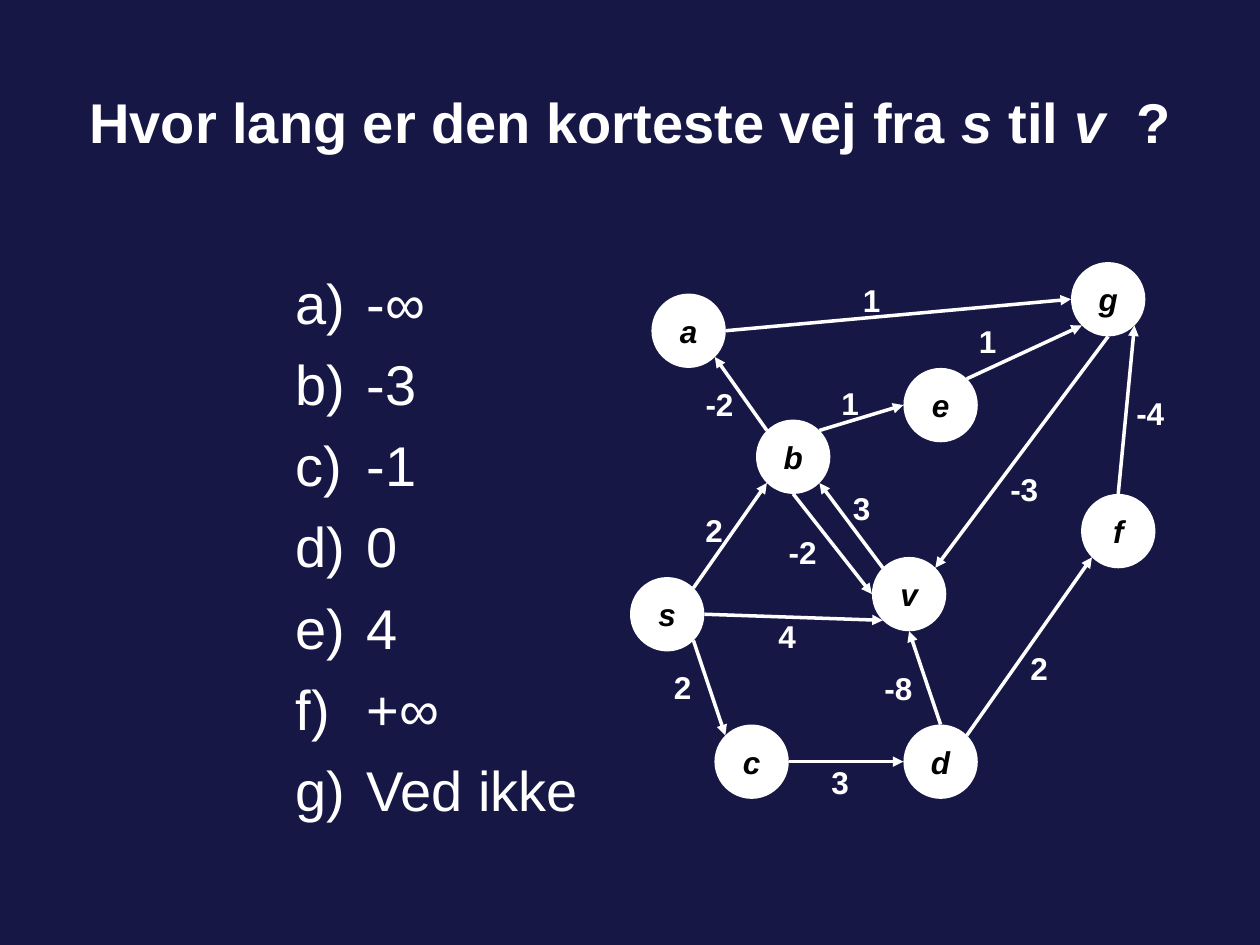
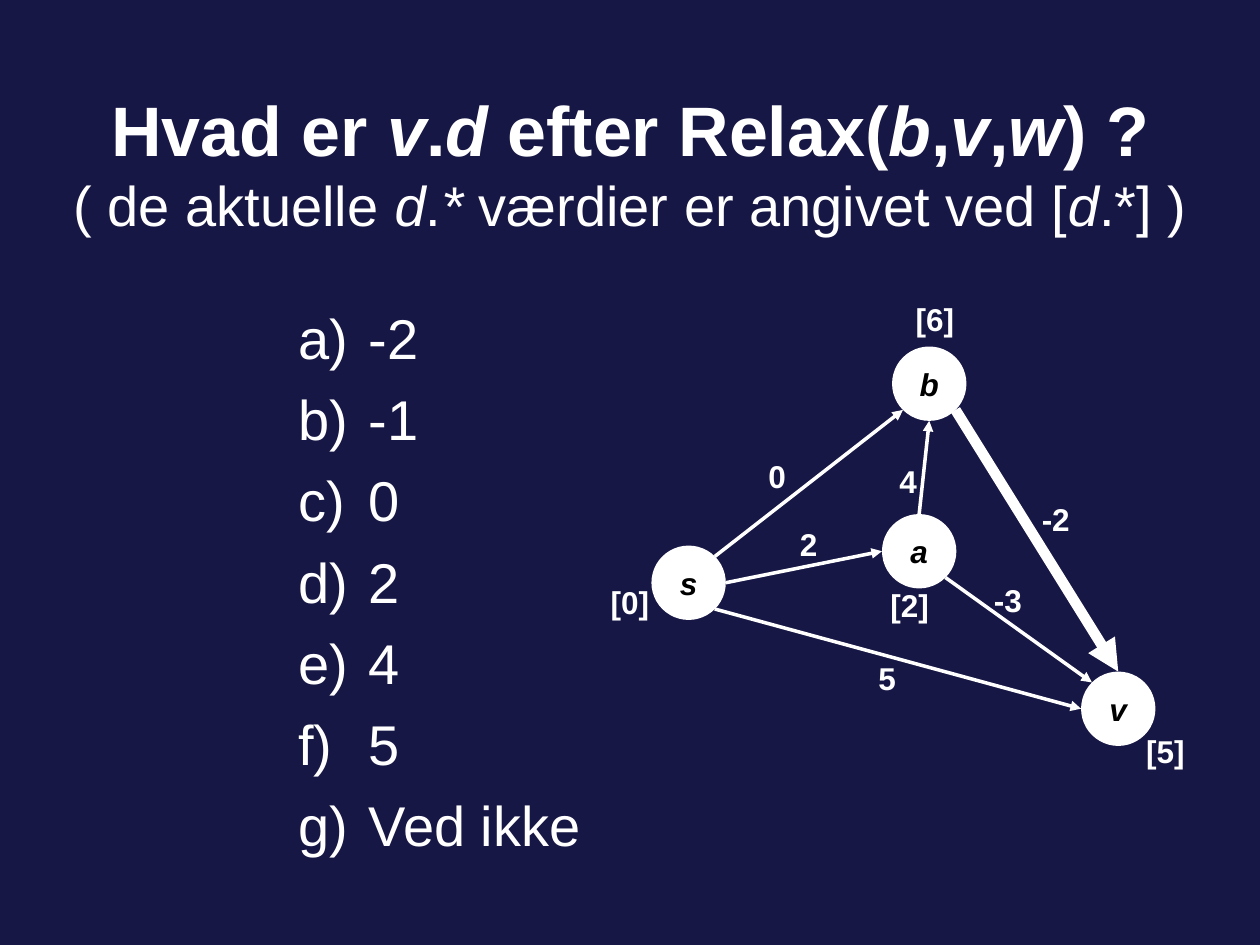
import math
from dataclasses import dataclass
from lxml import etree
from pptx import Presentation, util as u
from pptx.dml.color import RGBColor
from pptx.enum import shapes, text
from pptx.oxml.ns import qn


@dataclass
class Theme:
    font: str = "Arial"
    back: RGBColor = RGBColor(0x17, 0x17, 0x45)
    light: RGBColor = RGBColor(0xFF, 0xFF, 0xFF)
    dark: RGBColor = RGBColor(0, 0, 0)
    big: int = 40
    body: int = 32
    small: int = 18
    line: int = 2
    heavy: int = 6


T = Theme()
L, C, R = text.PP_ALIGN.LEFT, text.PP_ALIGN.CENTER, text.PP_ALIGN.RIGHT
NODE = 0.59
COMPASS = ["E", "SE", "S", "SW", "W", "NW", "N", "NE"]


def write(p, content, size=T.small, color=T.light, bold=False, italic=False, align=L):
    p.alignment = align
    for i, part in enumerate(content.split("_")):
        if part:
            r = p.add_run()
            r.text = part
            f = r.font
            f.name, f.size, f.bold = T.font, u.Pt(size), bold
            f.italic = italic or i % 2 == 1
            f.color.rgb = color


def site(node, direction):
    angle = COMPASS.index(direction) * math.pi / 4
    x, y = node
    half = NODE / 2
    return (u.Inches(x + half + half * math.cos(angle)),
            u.Inches(y + half + half * math.sin(angle)))


slides = [
    dict(
        title=[("Hvor lang er den korteste vej fra _s_ til _v_  ?", T.body, True)],
        title_top=0.25,
        answers=["-∞", "-3", "-1", "0", "4", "+∞", "Ved ikke"],
        answers_at=(2.25, 2.08),
        nodes=dict(b=(6, 3.33), g=(8.5, 2.08), a=(5.17, 2.33), c=(5.67, 5.75),
                   v=(6.92, 4.42), e=(7.17, 2.92), f=(8.58, 3.92),
                   d=(7.17, 5.75), s=(5, 4.58)),
        edges=["s NE b SW", "a E g W", "s SE c NW", "g S v NE", "v NW b SE",
               "b S v W", "c E d W", "b NW a SE", "s E v SW", "d NE f SW",
               "f N g SE", "e NE g SW", "b NE e W", "d N v S"],
        heavy=[],
        labels=[("1", 6.58, 3, 0.33, L), ("2", 5.25, 5.25, 0.33, L),
                ("-4", 8.92, 3.08, 0.67, L), ("2", 5.5, 4.01, 0.33, L),
                ("4", 6.08, 4.85, 0.33, L), ("3", 6.5, 6.01, 0.33, L),
                ("1", 6.75, 2.18, 0.33, L), ("-8", 6.67, 5.26, 0.67, R),
                ("2", 8.08, 5.1, 0.33, L), ("-3", 7.92, 3.68, 0.5, L),
                ("3", 6.67, 3.83, 0.33, L), ("-2", 6, 4.18, 0.58, R),
                ("-2", 5.25, 3.01, 0.67, R), ("1", 7.67, 2.51, 0.33, L)],
    ),
    dict(
        title=[("Hvad er _v_._d_ efter Relax(_b_,_v_,_w_) ?", T.big, True),
               ("( de aktuelle _d_._*_ værdier er angivet ved [_d_.*] )", T.body, False)],
        title_top=0.58,
        answers=["-2", "-1", "0", "2", "4", "5", "Ved ikke"],
        answers_at=(2.27, 2.36),
        nodes=dict(a=(7, 4.08), b=(7.08, 2.75), v=(8.58, 5.33), s=(5.17, 4.33)),
        edges=["s SE v W", "s E a W", "a SE v NW", "s NE b SW", "b SE v N", "a N b S"],
        heavy=["b SE v N"],
        labels=[("0", 6, 3.58, 0.33, L), ("2", 6.25, 4.12, 0.33, L),
                ("5", 6.83, 5.18, 0.42, C), ("4", 7.04, 3.62, 0.33, L),
                ("-2", 8.17, 3.92, 0.67, L), ("-3", 7.79, 4.56, 0.67, L),
                ("[0]", 4.5, 4.58, 0.75, R), ("[6]", 6.92, 2.33, 0.75, R),
                ("[2]", 6.72, 4.6, 0.75, R), ("[5]", 8.75, 5.76, 0.75, R)],
    ),
]

prs = Presentation()
prs.slide_width, prs.slide_height = u.Inches(10), u.Inches(7.5)
fill = prs.slide_master.background.fill
fill.solid()
fill.fore_color.rgb = T.back

for d in slides:
    s = prs.slides.add_slide(prs.slide_layouts[5])

    sp = s.shapes.title
    sp.left, sp.top = u.Inches(0), u.Inches(d["title_top"])
    sp.width, sp.height = u.Inches(10), u.Inches(1.42)
    tf = sp.text_frame
    tf.auto_size = text.MSO_AUTO_SIZE.NONE
    tf.vertical_anchor = text.MSO_ANCHOR.MIDDLE
    p = tf.paragraphs[0]
    for i, (line, size, bold) in enumerate(d["title"]):
        if i:
            p.add_line_break()
        write(p, line, size=size, bold=bold, align=C)

    x, y = d["answers_at"]
    tf = s.shapes.add_textbox(u.Inches(x), u.Inches(y), u.Inches(2.73), u.Inches(2.08)).text_frame
    tf.word_wrap = True
    for i, answer in enumerate(d["answers"]):
        p = tf.add_paragraph() if i else tf.paragraphs[0]
        write(p, answer, size=T.body)
        p.space_before = u.Pt(8)
        pPr = p._p.get_or_add_pPr()
        pPr.set("marL", str(u.Inches(0.56)))
        pPr.set("indent", str(-u.Inches(0.56)))
        etree.SubElement(pPr, qn("a:buFont"), typeface=T.font)
        etree.SubElement(pPr, qn("a:buAutoNum"), type="alphaLcParenR")

    for name, (x, y) in d["nodes"].items():
        sp = s.shapes.add_shape(shapes.MSO_SHAPE.OVAL, u.Inches(x), u.Inches(y),
                                u.Inches(NODE), u.Inches(NODE))
        sp.shadow.inherit = False
        sp.fill.solid()
        sp.fill.fore_color.rgb = T.light
        sp.line.fill.background()
        tf = sp.text_frame
        tf.word_wrap = False
        tf.vertical_anchor = text.MSO_ANCHOR.MIDDLE
        write(tf.paragraphs[0], name, color=T.dark, bold=True, italic=True, align=C)

    for edge in d["edges"]:
        start, leave, end, enter = edge.split()
        cx = s.shapes.add_connector(shapes.MSO_CONNECTOR.STRAIGHT,
                                    *site(d["nodes"][start], leave),
                                    *site(d["nodes"][end], enter))
        cx.line.color.rgb = T.light
        cx.line.width = u.Pt(T.heavy if edge in d["heavy"] else T.line)
        etree.SubElement(cx.line._get_or_add_ln(), qn("a:tailEnd"), type="triangle")
        etree.SubElement(cx._element.spPr, qn("a:effectLst"))

    for label, x, y, w, align in d["labels"]:
        tf = s.shapes.add_textbox(u.Inches(x), u.Inches(y), u.Inches(w), u.Inches(0.4)).text_frame
        tf.word_wrap = True
        write(tf.paragraphs[0], label, bold=True, align=align)

prs.save("out.pptx")
